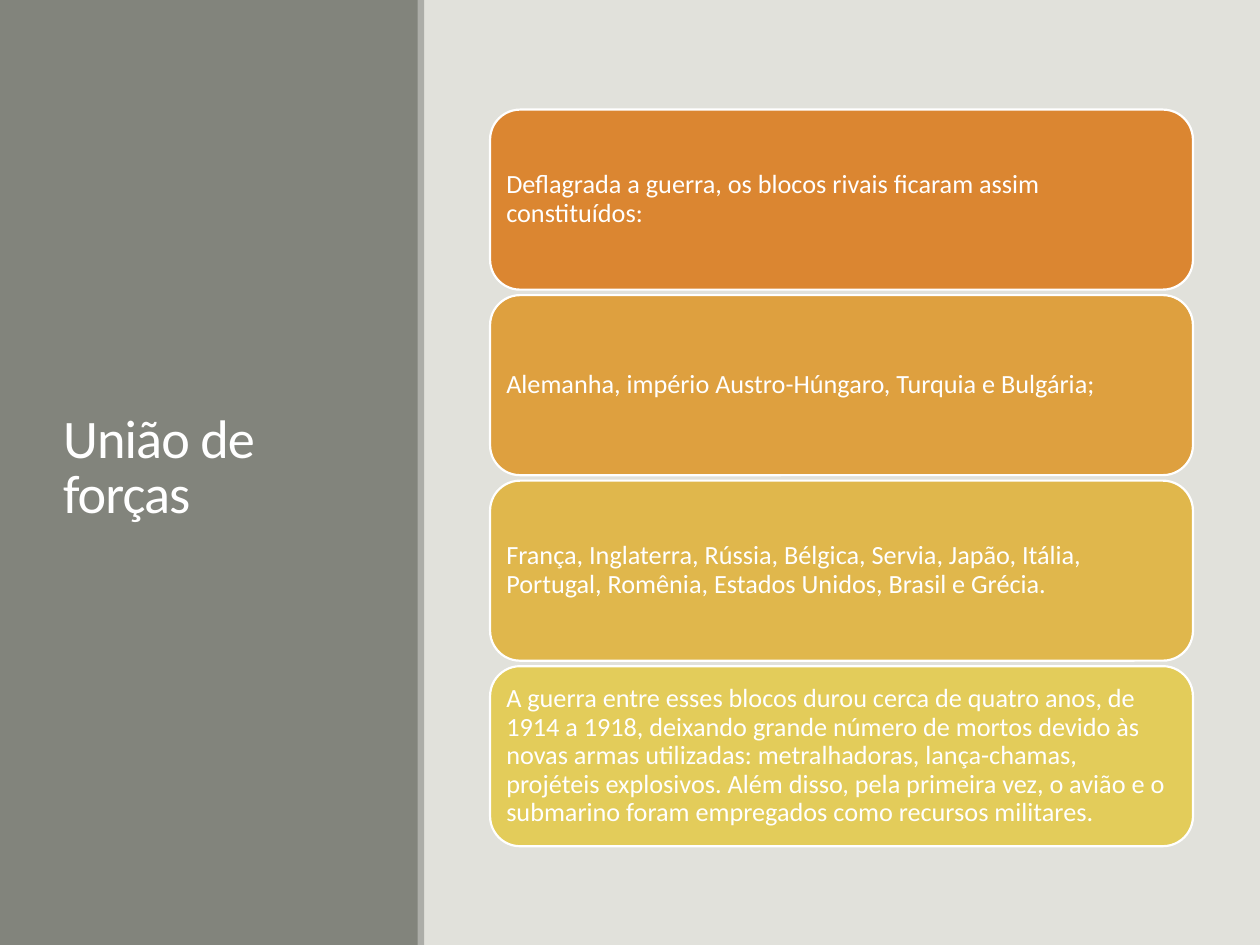
from pptx import Presentation
from pptx import util as u
from pptx.dml.color import RGBColor
from pptx.enum import shapes, text

BACKGROUND = RGBColor(0xE1, 0xE1, 0xDB)
PANEL = RGBColor(0x82, 0x84, 0x7C)
EDGE = RGBColor(0xAC, 0xAD, 0xA8)
WHITE = RGBColor(0xFF, 0xFF, 0xFF)
ORANGE = RGBColor(0xDB, 0x86, 0x31)
AMBER = RGBColor(0xDE, 0xA0, 0x3F)
GOLD = RGBColor(0xE0, 0xB7, 0x4C)
YELLOW = RGBColor(0xE3, 0xCC, 0x5A)

FONT = "Calibri"
PAGE_WIDTH, PAGE_HEIGHT = 25.4, 19.05
CARD_LEFT, CARD_TOP, CARD_WIDTH, CARD_HEIGHT = 9.88, 2.21, 14.17, 3.63
CARD_STEP = 3.74
CARD_MARGIN = 0.15

CARDS = [
    (ORANGE, "Deflagrada a guerra, os blocos rivais ficaram assim constituídos:"),
    (AMBER, "Alemanha, império Austro-Húngaro, Turquia e Bulgária;"),
    (GOLD, "França, Inglaterra, Rússia, Bélgica, Servia, Japão, Itália, "
           "Portugal, Romênia, Estados Unidos, Brasil e Grécia."),
    (YELLOW, "A guerra entre esses blocos durou cerca de quatro anos, de 1914 a 1918, "
             "deixando grande número de mortos devido às novas armas utilizadas: "
             "metralhadoras, lança-chamas, projéteis explosivos. Além disso, pela "
             "primeira vez, o avião e o submarino foram empregados como recursos militares."),
]


def add_block(page, kind, left, top, width, height, color):
    block = page.shapes.add_shape(kind, u.Cm(left), u.Cm(top), u.Cm(width), u.Cm(height))
    block.shadow.inherit = False
    block.fill.solid()
    block.fill.fore_color.rgb = color
    block.line.fill.background()
    return block


def write_text(box, words, size, line_spacing):
    frame = box.text_frame
    frame.text = words
    frame.word_wrap = True
    frame.auto_size = text.MSO_AUTO_SIZE.NONE
    frame.vertical_anchor = text.MSO_ANCHOR.MIDDLE
    para = frame.paragraphs[0]
    para.alignment = text.PP_ALIGN.LEFT
    para.line_spacing = line_spacing
    para.font.name = FONT
    para.font.size = u.Pt(size)
    para.font.color.rgb = WHITE
    return para


def add_side_panel(page):
    rectangle = shapes.MSO_SHAPE.RECTANGLE
    add_block(page, rectangle, 0, 0, 8.43, PAGE_HEIGHT, PANEL)
    add_block(page, rectangle, 8.42, 0, 0.13, PAGE_HEIGHT, EDGE)


def place_title(page, words):
    title = page.shapes.title
    title.left, title.top = u.Cm(1.02), u.Cm(1.45)
    title.width, title.height = u.Cm(6.43), u.Cm(16.03)
    para = write_text(title, words, 31, 0.85)
    para.runs[0].font._element.set("spc", "-50")
    page.shapes._spTree.append(title._element)


def add_card(page, index, color, words):
    card = add_block(page, shapes.MSO_SHAPE.ROUNDED_RECTANGLE, CARD_LEFT,
                     CARD_TOP + index * CARD_STEP, CARD_WIDTH, CARD_HEIGHT, color)
    card.line.color.rgb = WHITE
    card.line.width = u.Pt(1.25)
    frame = card.text_frame
    frame.margin_left = frame.margin_right = u.Cm(CARD_MARGIN)
    frame.margin_top = frame.margin_bottom = u.Cm(CARD_MARGIN)
    write_text(card, words, 15, 0.9)


def main():
    deck = Presentation()
    deck.slide_width, deck.slide_height = u.Cm(PAGE_WIDTH), u.Cm(PAGE_HEIGHT)
    page = deck.slides.add_slide(deck.slide_layouts.get_by_name("Title Only"))
    page.background.fill.solid()
    page.background.fill.fore_color.rgb = BACKGROUND
    add_side_panel(page)
    place_title(page, "União de forças")
    for index, (color, words) in enumerate(CARDS):
        add_card(page, index, color, words)
    deck.save("out.pptx")


if __name__ == "__main__":
    main()
